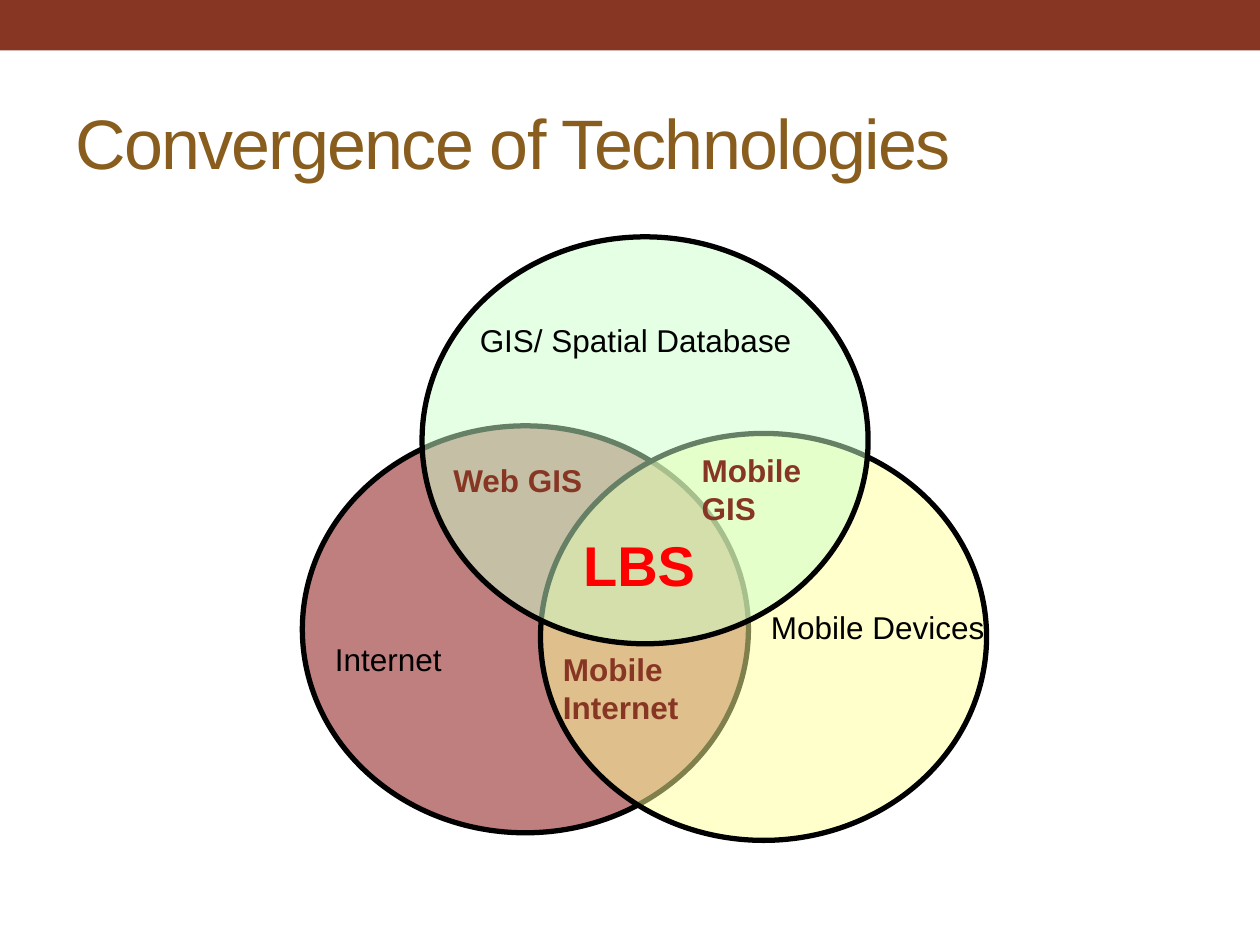
from dataclasses import dataclass

import lxml.etree
import pptx
import pptx.dml.color
import pptx.enum.shapes
import pptx.enum.text
import pptx.oxml.ns
import pptx.util

COLORS = {
    "brand": "873624",
    "title": "895D1D",
    "internet": "800000",
    "devices": "FFFF99",
    "gis": "CCFFCC",
    "ink": "000000",
    "accent": "FF0000",
}
COLS, ROWS = 100, 75
CIRCLE_W, CIRCLE_H = 35.4, 32.3
FONT = "Arial"

prs = pptx.Presentation()
prs.slide_width = pptx.util.Inches(10)
prs.slide_height = pptx.util.Inches(7.5)
s = prs.slides.add_slide(prs.slide_layouts[6])


@dataclass
class Label:
    text: str
    col: float
    row: float
    cols: float
    rows: float = 9
    color: str = "ink"
    size: float = 18
    bold: bool = False


@dataclass
class Circle:
    col: float
    row: float
    color: str
    label: Label


def box(col: float, row: float, cols: float, rows: float) -> list[int]:
    cw, rh = prs.slide_width / COLS, prs.slide_height / ROWS
    return [round(v) for v in (col * cw, row * rh, cols * cw, rows * rh)]


def rgb(name: str) -> pptx.dml.color.RGBColor:
    return pptx.dml.color.RGBColor.from_string(COLORS[name])


def add_filled(kind, place: list[int], color: str):
    sp = s.shapes.add_shape(kind, *place)
    sp.shadow.inherit = False
    sp.fill.solid()
    sp.fill.fore_color.rgb = rgb(color)
    return sp


def add_label(label: Label):
    sp = s.shapes.add_textbox(*box(label.col, label.row, label.cols, label.rows))
    tf = sp.text_frame
    tf.word_wrap = True
    r = tf.paragraphs[0].add_run()
    r.text = label.text
    formats = {"name": FONT, "size": pptx.util.Pt(label.size), "bold": label.bold}
    for key, value in formats.items():
        setattr(r.font, key, value)
    r.font.color.rgb = rgb(label.color)
    return sp


def add_circle(circle: Circle) -> None:
    place = box(circle.col, circle.row, CIRCLE_W, CIRCLE_H)
    sp = add_filled(pptx.enum.shapes.MSO_SHAPE.OVAL, place, circle.color)
    qn = pptx.oxml.ns.qn
    clr = sp.fill._xPr.find(qn("a:solidFill")).find(qn("a:srgbClr"))
    lxml.etree.SubElement(clr, qn("a:alpha"), val="50000")
    sp.line.color.rgb = rgb("ink")
    sp.line.width = pptx.util.Pt(3)
    add_label(circle.label)


CIRCLES = [
    Circle(24, 33.8, "internet", Label("Internet", 25.6, 50.3, 21.3, 5)),
    Circle(42.9, 34.4, "devices", Label("Mobile Devices", 60.2, 47.8, 20.5)),
    Circle(33.5, 18.8, "gis", Label("GIS/ Spatial Database", 37.1, 25, 30.7)),
]
OVERLAPS = [
    Label("Web GIS", 35, 36.1, 12.6, color="brand", bold=True),
    Label("LBS", 45.3, 41.6, 12.6, 6.3, "accent", 32, True),
    Label("Mobile Internet", 43.7, 51.1, 15, color="brand", bold=True),
    Label("Mobile GIS", 54.7, 35.3, 14.2, color="brand", bold=True),
]

banner = add_filled(pptx.enum.shapes.MSO_SHAPE.RECTANGLE, box(0, 0, COLS, 4), "brand")
banner.line.fill.background()

title = add_label(Label("Convergence of Technologies", 5, 5.8, 90, 10.8, "title", 40))
title.text_frame.vertical_anchor = pptx.enum.text.MSO_ANCHOR.MIDDLE
title.text_frame.paragraphs[0].runs[0].font._element.set("spc", "-100")

for circle in CIRCLES:
    add_circle(circle)
for label in OVERLAPS:
    add_label(label)

prs.save("out.pptx")
